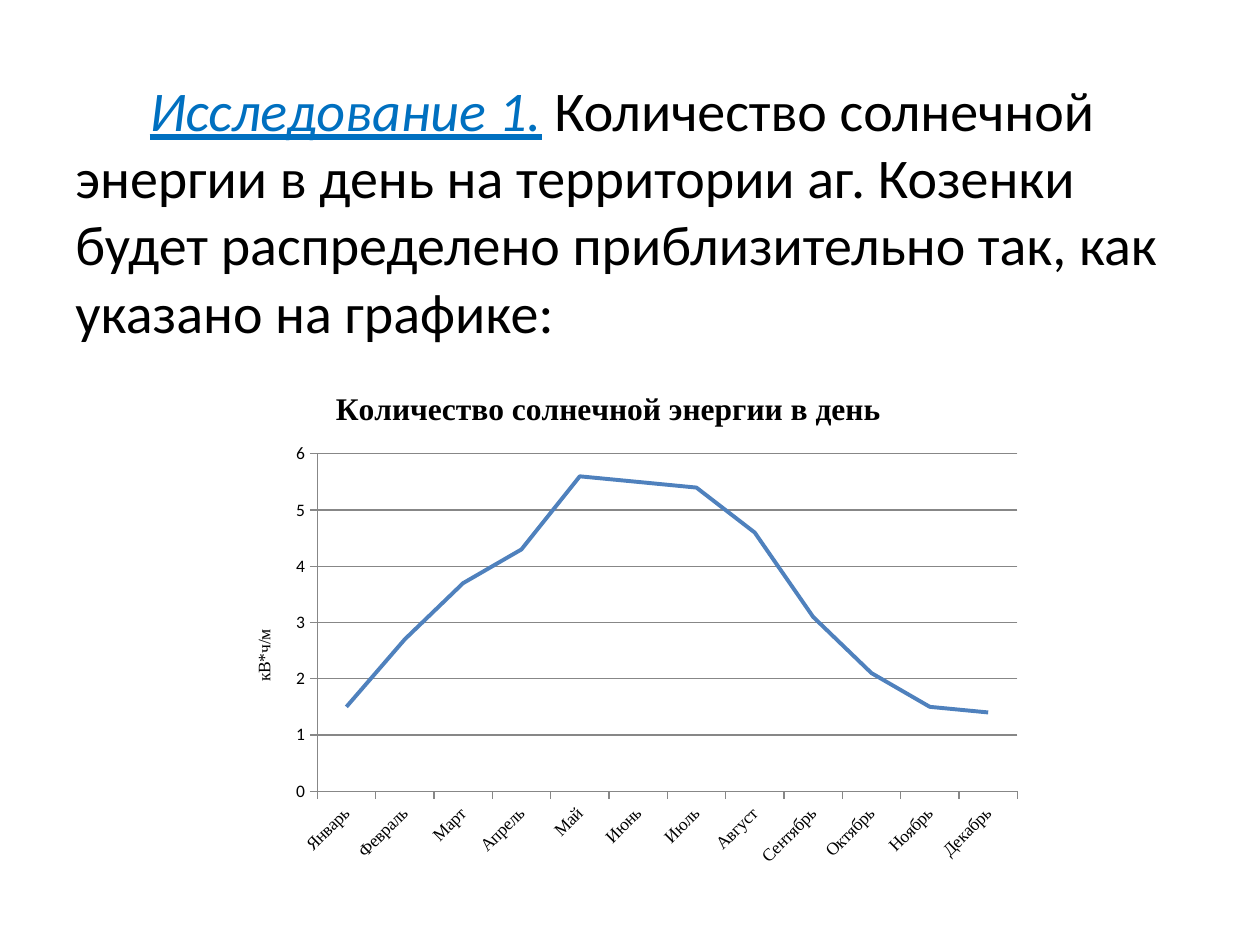
from pptx import Presentation
from pptx import util as u
from pptx.chart.data import CategoryChartData
from pptx.dml.color import RGBColor
from pptx.enum import chart as charts
from pptx.oxml import parse_xml
from pptx.oxml.ns import nsdecls, qn

# Content
HEADING = "Исследование 1."
STATEMENT = (" Количество солнечной энергии в день на территории аг. Козенки "
             "будет распределено приблизительно так, как указано на графике:")
CHART_TITLE = "Количество солнечной энергии в день"
UNIT = "кВ*ч/м"
ENERGY = {
    "Январь": 1.5, "Февраль": 2.7, "Март": 3.7, "Апрель": 4.3,
    "Май": 5.6, "Июнь": 5.5, "Июль": 5.4, "Август": 4.6,
    "Сентябрь": 3.1, "Октябрь": 2.1, "Ноябрь": 1.5, "Декабрь": 1.4,
}
SANS, SERIF = "Calibri", "Times New Roman"
BLACK, BLUE, LINE, GRID = "000000", "0070C0", "4F81BD", "878787"


def color(value):
    return RGBColor.from_string(value)


def style(font, name, size, value=BLACK, bold=False):
    font.name, font.size, font.bold = name, u.Pt(size), bold
    font.color.rgb = color(value)


def set_title(owner, words, size, bold):
    frame = owner.text_frame
    frame.text = words
    style(frame.paragraphs[0].font, SERIF, size, bold=bold)


def place(element, **percents):
    """Position a chart part by percentages of the chart's size."""
    target = '<c:layoutTarget val="inner"/>' if "w" in percents else ""
    modes = "".join(f'<c:{key}Mode val="edge"/>' for key in "xy")
    values = "".join(f'<c:{key} val="{percent / 100:.3f}"/>'
                     for key, percent in percents.items())
    layout = parse_xml(f'<c:layout {nsdecls("c")}><c:manualLayout>'
                       f'{target}{modes}{values}</c:manualLayout></c:layout>')
    previous = element.find(qn("c:layout"))
    if previous is not None:
        element.remove(previous)
    words = element.find(qn("c:tx"))
    element.insert(0 if words is None else 1, layout)


presentation = Presentation()
presentation.slide_width, presentation.slide_height = u.Inches(10), u.Inches(7.5)
slide = presentation.slides.add_slide(presentation.slide_layouts[6])

# Statement
box = slide.shapes.add_textbox(u.Inches(0.5), u.Inches(0.55), u.Inches(9), u.Inches(6.15))
box.text_frame.word_wrap = True
paragraph = box.text_frame.paragraphs[0]
style(paragraph.font, SANS, 32)
paragraph._p.get_or_add_pPr().set("indent", str(u.Inches(0.59)))
heading = paragraph.add_run()
heading.text = HEADING
heading.font.italic = heading.font.underline = True
heading.font.color.rgb = color(BLUE)
paragraph.add_run().text = STATEMENT

# Line chart
data = CategoryChartData()
data.categories = list(ENERGY)
data.add_series("Series 1", list(ENERGY.values()))
chart = slide.shapes.add_chart(
    charts.XL_CHART_TYPE.LINE, u.Inches(1.8), u.Inches(2.89),
    u.Inches(6.41), u.Inches(4.07), data).chart
style(chart.font, SANS, 10)
chart.has_legend = False
set_title(chart.chart_title, CHART_TITLE, 18, True)
series = chart.plots[0].series[0]
series.smooth = False
series.format.line.color.rgb = color(LINE)
series.format.line.width = u.Pt(2.25)

# Axes
months, energy = chart.category_axis, chart.value_axis
energy.minimum_scale, energy.maximum_scale, energy.major_unit = 0, 6, 1
energy.has_major_gridlines = True
set_title(energy.axis_title, UNIT, 10, False)
style(energy.tick_labels.font, SANS, 10)
style(months.tick_labels.font, SERIF, 10)
months._element.txPr.find(qn("a:bodyPr")).set("rot", str(-45 * 60000))
for part in (months, energy, energy.major_gridlines):
    part.format.line.color.rgb = color(GRID)
    part.format.line.width = u.Pt(0.75)
for axis in (months, energy):
    axis.major_tick_mark = charts.XL_TICK_MARK.OUTSIDE

# Positions inside the chart
place(chart.chart_title._element, x=12.8, y=3.8)
place(energy.axis_title._element, x=2.8, y=51.1)
place(chart._chartSpace.chart.plotArea, x=11.2, y=17.5, w=86.7, h=65.8)

presentation.save("out.pptx")
